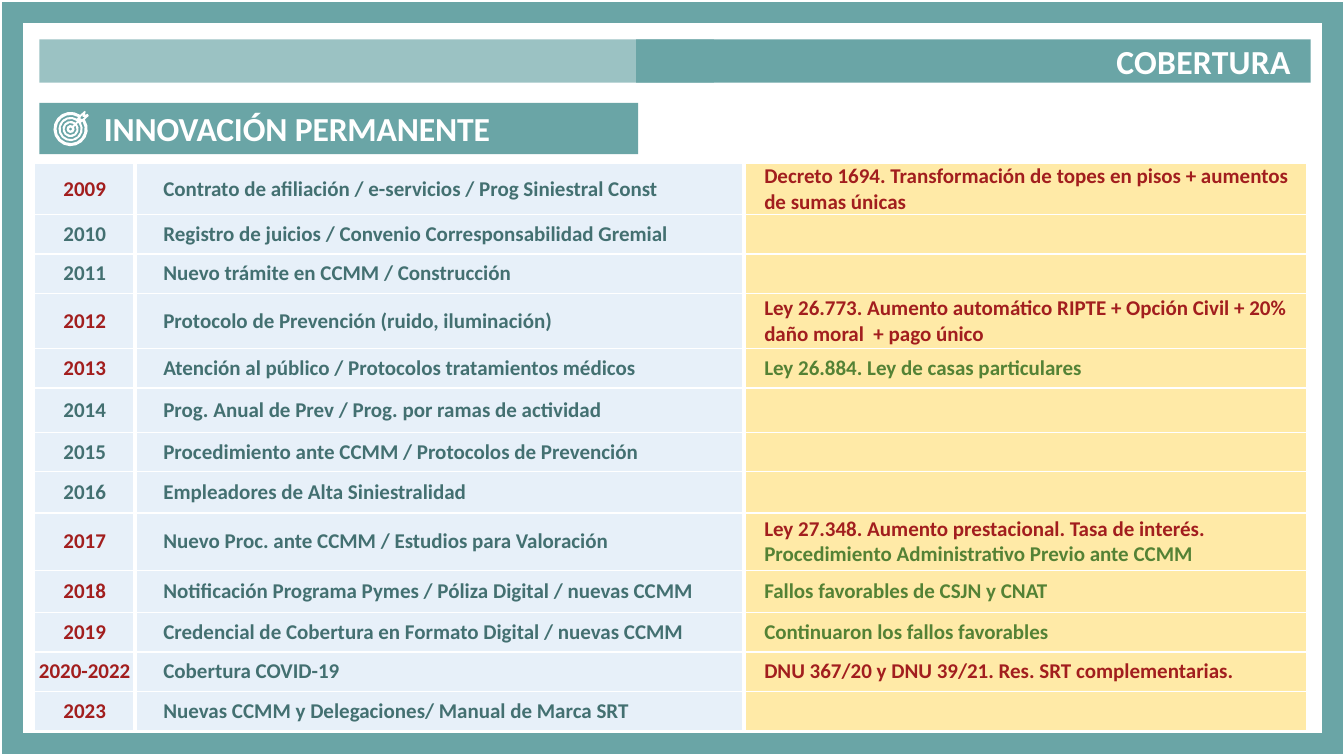
from math import cos, radians, sin

from lxml.etree import SubElement
from pptx import Presentation
from pptx.dml.color import RGBColor
from pptx.enum.shapes import MSO_SHAPE as Shape
from pptx.enum.text import MSO_ANCHOR as Anchor, PP_ALIGN as Align
from pptx.oxml.ns import qn
from pptx.util import Inches, Pt

FONT = "Calibri"
COLORS = {
    "teal": "6AA5A6", "white": "FFFFFF", "blue": "5B9BD5", "sand": "FFEAA7",
    "red": "A21E1E", "slate": "437071", "green": "548235",
}
WIDTHS = [1, 6.04, 5.58]
# Row height, year, year color, work done, runs of law text
ROWS = [
    (0.51, "2009", "red", "Contrato de afiliación / e-servicios / Prog Siniestral Const",
     [("Decreto 1694. Transformación de topes en pisos + aumentos de sumas únicas", "red")]),
    (0.39, "2010", "slate", "Registro de juicios / Convenio Corresponsabilidad Gremial", []),
    (0.39, "2011", "slate", "Nuevo trámite en CCMM / Construcción", []),
    (0.55, "2012", "red", "Protocolo de Prevención (ruido, iluminación)",
     [("Ley 26.773. Aumento automático RIPTE + Opción Civil + 20% daño moral  + pago único", "red")]),
    (0.39, "2013", "red", "Atención al público / Protocolos tratamientos médicos",
     [("Ley 26.884. Ley de casas particulares", "green")]),
    (0.44, "2014", "slate", "Prog. Anual de Prev / Prog. por ramas de actividad", []),
    (0.39, "2015", "slate", "Procedimiento ante CCMM / Protocolos de Prevención", []),
    (0.41, "2016", "slate", "Empleadores de Alta Siniestralidad", []),
    (0.57, "2017", "red", "Nuevo Proc. ante CCMM / Estudios para Valoración",
     [("Ley 27.348. Aumento prestacional. Tasa de interés. ", "red"),
      ("Procedimiento Administrativo Previo ante CCMM", "green")]),
    (0.42, "2018", "red", "Notificación Programa Pymes / Póliza Digital / nuevas CCMM",
     [("Fallos favorables de CSJN y CNAT", "green")]),
    (0.39, "2019", "red", "Credencial de Cobertura en Formato Digital / nuevas CCMM",
     [("Continuaron los fallos favorables", "green")]),
    (0.39, "2020-2022", "red", "Cobertura COVID-19",
     [("DNU 367/20 y DNU 39/21. Res. SRT complementarias.", "red")]),
    (0.39, "2023", "red", "Nuevas CCMM y Delegaciones/ Manual de Marca SRT", []),
]
# Outer radius, inner radius, half angle left open for the dart, steps
GAPS = [(0.14, 0.12, 13, 14), (0.1, 0.08, 6, 12), (0.06, 0.04, 12, 8)]
TAIL = [(0.88, 1.15), (0.87, 1.13), (0.84, 1.14), (0.85, 1.11), (0.84, 1.1)]
NOTCH = [(0.82, 1.14), (0.82, 1.16), (0.84, 1.16), (0.82, 1.18), (0.8, 1.18), (0.8, 1.16)]


def rgb(name):
    return RGBColor.from_string(COLORS[name])


def paint(fill, color, node=None, alpha=100):
    """Fill with a color; below 100, alpha is set on the fill inside node."""
    fill.solid()
    fill.fore_color.rgb = rgb(color)
    if alpha < 100:
        tint = node.find(qn("a:solidFill")).find(qn("a:srgbClr"))
        SubElement(tint, qn("a:alpha"), val=str(alpha * 1000))


def add_run(para, text, color, size, space=0):
    run = para.add_run()
    run.text = text
    font = run.font
    font.name, font.size, font.bold = FONT, Pt(size), True
    font.color.rgb = rgb(color)
    if space:
        run._r.get_or_add_rPr().set("spc", str(space))


def add_bar(slide, left, top, width, height, alpha=100):
    bar = slide.shapes.add_shape(Shape.RECTANGLE, *map(Inches, (left, top, width, height)))
    bar.shadow.inherit = False
    bar.line.fill.background()
    paint(bar.fill, "teal", bar.element.spPr, alpha)
    return bar


def add_title(bar, text, align, space, left=0, right=0):
    frame = bar.text_frame
    frame.word_wrap = True
    frame.vertical_anchor = Anchor.MIDDLE
    frame.margin_top = frame.margin_bottom = 0
    frame.margin_left, frame.margin_right = Inches(left), Inches(right)
    para = frame.paragraphs[0]
    para.alignment = align
    add_run(para, text, "white", 24, space)


def add_frame(slide):
    frame = slide.shapes.add_shape(Shape.RECTANGLE, *map(Inches, (0.12, 0.12, 13.1, 7.26)))
    frame.shadow.inherit = False
    frame.fill.background()
    frame.line.color.rgb = rgb("teal")
    frame.line.width = Pt(15)
    SubElement(frame.element.spPr.find(qn("a:ln")), qn("a:miter"), lim="800000")


def add_outline(slide, loops):
    """Draw closed loops as one white shape; inner loops cut holes."""
    loops = [[(Inches(x), Inches(y)) for x, y in loop] for loop in loops]
    pen = slide.shapes.build_freeform(*loops[0][0])
    for i, loop in enumerate(loops):
        if i:
            pen.move_to(*loop[0])
        pen.add_line_segments(loop[1:], close=True)
    shape = pen.convert_to_shape()
    shape.shadow.inherit = False
    shape.line.fill.background()
    paint(shape.fill, "white")


def arc(radius, open_by, steps):
    """Points round the target, open on the upper right by twice the half angle."""
    sweep = 360 - 2 * open_by
    turns = [radians(open_by - 45 + sweep * i / steps) for i in range(steps + 1)]
    return [(0.7 + radius * cos(t), 1.28 + radius * sin(t)) for t in turns]


def add_target(slide):
    loops = [arc(0.17, 11, 16) + TAIL[::-1]]
    for outer, inner, half, steps in GAPS:
        loops.append(arc(outer, half, steps) + arc(inner, half, steps)[::-1])
    loops += [arc(0.015, 30, 5), NOTCH]
    add_outline(slide, loops)


def set_edges(cell, col):
    left = 3 if col else 1
    right = 3 if col < len(WIDTHS) - 1 else 1
    props = cell._tc.get_or_add_tcPr()
    for side, width in zip("LRTB", (left, right, 1, 1)):
        line = SubElement(props, qn("a:ln" + side), w=str(Pt(width)))
        SubElement(SubElement(line, qn("a:solidFill")), qn("a:srgbClr"), val=COLORS["white"])


def fill_cell(cell, col, runs):
    set_edges(cell, col)
    color, alpha = ("sand", 100) if col == 2 else ("blue", 14)
    paint(cell.fill, color, cell._tc.tcPr, alpha)
    cell.vertical_anchor = Anchor.MIDDLE
    cell.margin_top = cell.margin_bottom = cell.margin_right = 0
    cell.margin_left = Inches((0, 0.28, 0.2)[col])
    para = cell.text_frame.paragraphs[0]
    para.alignment = Align.LEFT if col else Align.CENTER
    para.font.size = Pt(15)
    for text, tone in runs:
        add_run(para, text, tone, 15)


def add_grid(slide):
    high = sum(row[0] for row in ROWS)
    table = slide.shapes.add_table(
        len(ROWS), len(WIDTHS), Inches(0.34), Inches(1.62),
        Inches(sum(WIDTHS)), Inches(high)).table
    table.first_row = table.horz_banding = False
    for col, width in zip(table.columns, WIDTHS):
        col.width = Inches(width)
    for i, (height, year, tone, work, laws) in enumerate(ROWS):
        table.rows[i].height = Inches(height)
        for j, runs in enumerate(([(year, tone)], [(work, "slate")], laws)):
            fill_cell(table.cell(i, j), j, runs)


def main():
    deck = Presentation()
    deck.slide_width, deck.slide_height = Inches(13.33), Inches(7.5)
    slide = deck.slides.add_slide(deck.slide_layouts[6])
    add_frame(slide)
    add_bar(slide, 0.39, 0.39, 6.69, 0.43, alpha=67)
    add_title(add_bar(slide, 6.31, 0.39, 6.69, 0.43), "COBERTURA",
              Align.RIGHT, 20, right=0.2)
    add_title(add_bar(slide, 0.39, 1.02, 5.94, 0.51), "INNOVACIÓN PERMANENTE",
              Align.LEFT, -10, left=0.64)
    add_target(slide)
    add_grid(slide)
    deck.save("out.pptx")


if __name__ == "__main__":
    main()
